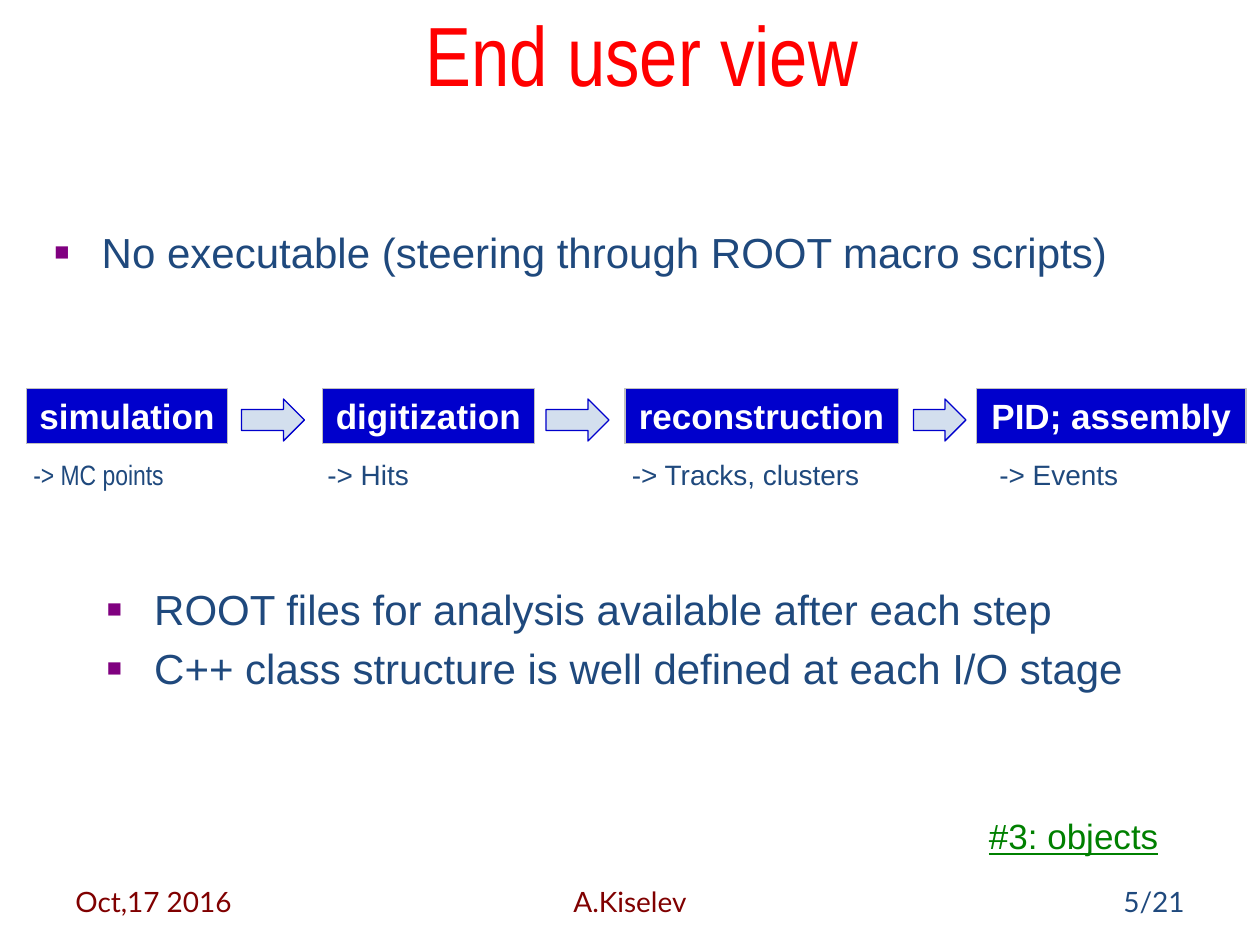
from lxml.etree import SubElement
from pptx import Presentation
from pptx.dml.color import RGBColor
from pptx.enum.shapes import MSO_SHAPE as Preset
from pptx.enum.text import MSO_ANCHOR as Anchor, MSO_AUTO_SIZE as AutoSize, PP_ALIGN as Align
from pptx.oxml.ns import qn
from pptx.util import Pt

NAVY, BLUE, RED, MAROON = "1F497D", "0000CC", "FF0000", "800000"
GREEN, PURPLE, SILVER, WHITE = "008000", "800080", "C0C0C0", "FFFFFF"
ARROW_FILL = "95B3D7"
HANGING = 27


def color(value):
    return RGBColor.from_string(value)


def points(*lengths):
    return [Pt(length) for length in lengths]


def fill_text(shape, lines, size, ink, font="Arial", align=Align.LEFT,
              anchor=Anchor.TOP, wrap=True, bold=False, underline=False):
    frame = shape.text_frame
    frame.text = "\n".join(lines)
    frame.word_wrap = wrap
    frame.auto_size = AutoSize.NONE if wrap else AutoSize.SHAPE_TO_FIT_TEXT
    frame.vertical_anchor = anchor
    for paragraph in frame.paragraphs:
        paragraph.alignment = align
        for run in paragraph.runs:
            run.font.name = font
            run.font.size = Pt(size)
            run.font.bold = bold
            run.font.underline = underline
            run.font.color.rgb = color(ink)


def add_text(slide, box, lines, size, ink, **options):
    shape = slide.shapes.add_textbox(*points(*box))
    fill_text(shape, lines, size, ink, **options)
    return shape


def add_hanging_text(slide, box, lines, size, font="Arial", bullet=False):
    shape = add_text(slide, box, lines, size, NAVY, font=font)
    for paragraph in shape.text_frame.paragraphs:
        paragraph.space_before = Pt(size * 0.2)
        properties = paragraph._p.get_or_add_pPr()
        properties.set("marL", str(Pt(HANGING)))
        properties.set("indent", str(Pt(-HANGING)))
        if bullet:
            tint = SubElement(properties, qn("a:buClr"))
            SubElement(tint, qn("a:srgbClr"), val=PURPLE)
            SubElement(properties, qn("a:buSzPct"), val="60000")
            SubElement(properties, qn("a:buFont"), typeface="Arial")
            SubElement(properties, qn("a:buChar"), char="■")


def add_preset(slide, preset, box, fill, line):
    shape = slide.shapes.add_shape(preset, *points(*box))
    shape.shadow.inherit = False
    shape.fill.solid()
    shape.fill.fore_color.rgb = color(fill)
    shape.line.color.rgb = color(line)
    shape.line.width = Pt(0.75)
    return shape


def add_arrow(slide, box):
    arrow = add_preset(slide, Preset.RIGHT_ARROW, box, ARROW_FILL, BLUE)
    tint = arrow.fill._xPr.find(qn("a:solidFill"))[0]
    SubElement(tint, qn("a:alpha"), val="41000")


def add_pipeline(slide, left, top):
    """Draw the processing steps, the arrows between them and their outputs."""
    # label, offset, width, output, output offset, output width, output font
    steps = [
        ("simulation", 3, 115.2, "-> MC points", 0, 114, "Arial Narrow"),
        ("digitization", 172.3, 121, "-> Hits", 168, 90, "Arial"),
        ("reconstruction", 345.1, 156.2, "-> Tracks, clusters", 342, 162, "Arial"),
        ("PID; assembly", 546, 154.1, "-> Events", 552, 120, "Arial"),
    ]
    for label, offset, width, output, output_offset, output_width, font in steps:
        step = add_preset(slide, Preset.RECTANGLE,
                          (left + offset, top, width, 31.5), BLUE, SILVER)
        fill_text(step, [label], 20, WHITE, align=Align.CENTER, wrap=False, bold=True)
        add_hanging_text(slide, (left + output_offset, top + 36, output_width, 30),
                         [output], 16, font=font)
    for offset, width in [(126, 36), (300, 36), (510, 30)]:
        add_arrow(slide, (left + offset, top + 6, width, 24))


def add_footer(slide, left, top, height):
    entries = [
        ("Oct,17 2016", 0, 168, MAROON, Align.LEFT),
        ("A.Kiselev", 210, 228, MAROON, Align.CENTER),
        ("5/21", 480, 168, NAVY, Align.RIGHT),
    ]
    for text, offset, width, ink, align in entries:
        add_text(slide, (left + offset, top, width, height), [text], 16, ink,
                 font="Lato", align=align, anchor=Anchor.MIDDLE)


def main():
    presentation = Presentation()
    presentation.slide_width, presentation.slide_height = points(720, 540)
    slide = presentation.slides.add_slide(presentation.slide_layouts[6])
    add_text(slide, (60, 0, 613.5, 60), ["End user view"], 48, RED,
             font="Arial Narrow", align=Align.CENTER, anchor=Anchor.MIDDLE)
    add_hanging_text(slide, (24, 126, 672, 48),
                     ["No executable (steering through ROOT macro scripts)"],
                     24, bullet=True)
    add_pipeline(slide, 12, 222)
    add_hanging_text(slide, (54, 330, 624, 84),
                     ["ROOT files for analysis available after each step",
                      "C++ class structure is well defined at each I/O stage"],
                     24, bullet=True)
    add_text(slide, (558, 462, 112, 31.5), ["#3: objects"], 20, GREEN,
             wrap=False, underline=True)
    add_footer(slide, 36, 500.5, 28.75)
    presentation.save("out.pptx")


if __name__ == "__main__":
    main()
